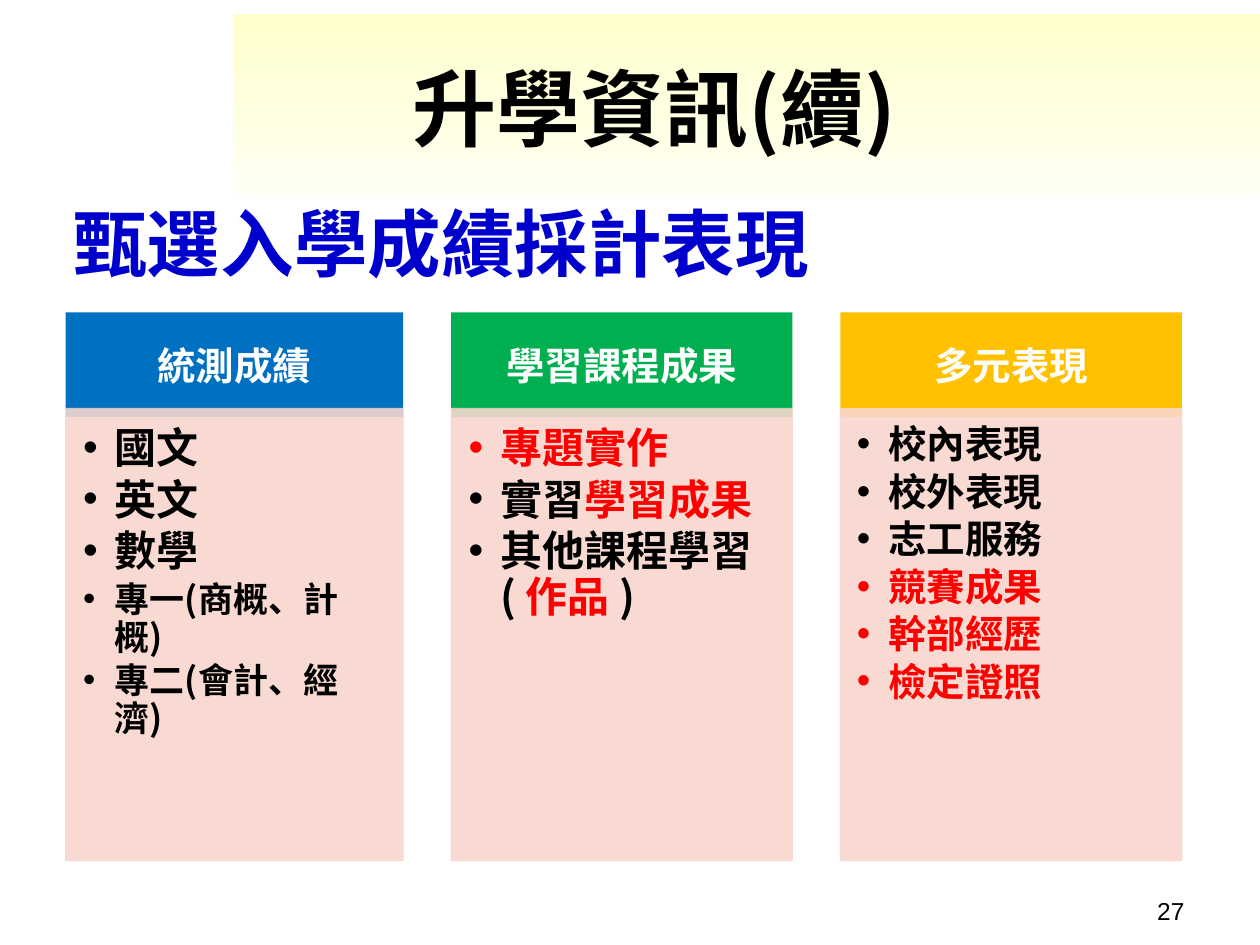
from lxml import etree
from pptx import Presentation
from pptx.dml.color import RGBColor
from pptx.enum import shapes, text
from pptx.oxml import ns
from pptx import util as u

COLORS = {
    "black": "000000", "white": "FFFFFF", "red": "FF0000", "navy": "0000CC",
    "blue": "0070C0", "green": "00B050", "amber": "FFC000", "panel": "F8D7CE",
    "band_top": "FFFFCC", "band_bottom": "FFFFF3",
}
CJK_FONT = "Noto Sans CJK SC"
HEADER_TOP, HEADER_HEIGHT = 2.48, 0.83
LIST_TOP, LIST_HEIGHT = 3.24, 3.59
LINE_RATIO, AFTER_RATIO = 1.09, 0.14  # line pitch and gap, relative to text size

# Each list item is (size, [(text, colour), ...])
COLUMNS = [
    dict(left=0.52, width=2.68, header="統測成績", color="blue", body=2,
         margins=(0.14, 0.14, 0.19, 0.21),
         items=[(24, [("國文", "black")]), (24, [("英文", "black")]),
                (24, [("數學", "black")]),
                (20, [("專一(商概、計概)", "black")]),
                (20, [("專二(會計、經濟)", "black")])]),
    dict(left=3.58, width=2.71, header="學習課程成果", color="green", body=3,
         margins=(0.14, 0.14, 0.19, 0.21),
         items=[(24, [("專題實作", "red")]),
                (24, [("實習", "black"), ("學習成果", "red")]),
                (24, [("其他課程學習 ( ", "black"), ("作品 ", "red"), (")", "black")])]),
    dict(left=6.67, width=2.71, header="多元表現", color="amber", body=4,
         margins=(0.13, 0.13, 0.17, 0.19),
         items=[(22, [(name, "black")]) for name in ("校內表現", "校外表現", "志工服務")]
         + [(22, [(name, "red")]) for name in ("競賽成果", "幹部經歷", "檢定證照")]),
]


def rgb(name):
    return RGBColor.from_string(COLORS[name])


def place(shape, left, top, width, height):
    shape.left, shape.top = u.Inches(left), u.Inches(top)
    shape.width, shape.height = u.Inches(width), u.Inches(height)


def set_frame(shape, anchor=text.MSO_ANCHOR.MIDDLE, margins=(0.1, 0.05, 0.1, 0.05)):
    frame = shape.text_frame
    frame.word_wrap = True
    frame.auto_size = text.MSO_AUTO_SIZE.NONE
    frame.vertical_anchor = anchor
    (frame.margin_left, frame.margin_top,
     frame.margin_right, frame.margin_bottom) = map(u.Inches, margins)
    return frame


def add_run(paragraph, words, size=22, color="black", font=CJK_FONT, bold=True):
    run = paragraph.add_run()
    run.text = words
    run.font.size, run.font.bold, run.font.name = u.Pt(size), bold, font
    run.font.color.rgb = rgb(color)
    east_asian = etree.SubElement(run._r.get_or_add_rPr(), ns.qn("a:ea"))
    east_asian.set("typeface", font)


def write_line(frame, words, align=text.PP_ALIGN.CENTER, **font_format):
    paragraph = frame.paragraphs[0]
    paragraph.alignment = align
    paragraph.space_before = u.Pt(0)
    add_run(paragraph, words, **font_format)


def add_back_rectangle(slide, *position):
    """Add a plain rectangle behind the placeholders."""
    shape = slide.shapes.add_shape(shapes.MSO_SHAPE.RECTANGLE, *map(u.Inches, position))
    shape.shadow.inherit = False
    shape.line.fill.background()
    shape._element.getparent().insert(2, shape._element)
    return shape


def add_bullet(paragraph):
    properties = paragraph._p.get_or_add_pPr()
    properties.set("marL", str(u.Inches(0.25)))
    properties.set("indent", str(-u.Inches(0.25)))
    etree.SubElement(properties, ns.qn("a:buFont")).set("typeface", "Arial")
    etree.SubElement(properties, ns.qn("a:buChar")).set("char", "•")


def set_panel_colors(shape):
    shape.fill.solid()
    shape.fill.fore_color.rgb = rgb("panel")
    shape.line.color.rgb = rgb("panel")
    shape.line.width = u.Pt(0.5)
    for color in shape._element.spPr.iter(ns.qn("a:srgbClr")):
        etree.SubElement(color, ns.qn("a:alpha")).set("val", "90000")


def fill_list(shape, items, margins):
    frame = set_frame(shape, text.MSO_ANCHOR.TOP, margins)
    for index, (size, runs) in enumerate(items):
        paragraph = frame.add_paragraph() if index else frame.paragraphs[0]
        add_bullet(paragraph)
        paragraph.level = 1
        paragraph.alignment = text.PP_ALIGN.LEFT
        paragraph.line_spacing = u.Pt(round(LINE_RATIO * size, 1))
        paragraph.space_before = u.Pt(0)
        paragraph.space_after = u.Pt(round(AFTER_RATIO * size, 1))
        for words, color in runs:
            add_run(paragraph, words, size=size, color=color)


def add_column(slide, left, width, header, color, body, margins, items):
    heading = add_back_rectangle(slide, left, HEADER_TOP, width, HEADER_HEIGHT)
    heading.fill.solid()
    heading.fill.fore_color.rgb = rgb(color)
    write_line(set_frame(heading, margins=(0.17, 0.1, 0.17, 0.1)), header, color="white")

    panel = slide.placeholders[body]
    place(panel, left, LIST_TOP, width, LIST_HEIGHT)
    set_panel_colors(panel)
    fill_list(panel, items, margins)


def main():
    presentation = Presentation()
    presentation.slide_width, presentation.slide_height = u.Inches(10), u.Inches(7.5)
    slide = presentation.slides.add_slide(presentation.slide_layouts[4])

    # Title on its gradient band
    band = add_back_rectangle(slide, 1.85, 0.11, 8.15, 1.43)
    band.fill.gradient()
    band.fill.gradient_angle = 270
    for stop, color, position in zip(band.fill.gradient_stops,
                                     ("band_top", "band_bottom"), (0, 1)):
        stop.color.rgb = rgb(color)
        stop.position = position
    title = slide.shapes.title
    place(title, 1.85, 0.38, 6.69, 0.93)
    write_line(set_frame(title), "升學資訊(續)", size=48)

    # Subtitle
    subtitle = slide.placeholders[1]
    place(subtitle, 0.43, 1.52, 6.14, 0.81)
    write_line(set_frame(subtitle), "甄選入學成績採計表現", size=42, color="navy")

    # Three columns
    for column in COLUMNS:
        add_column(slide, **column)

    # Page number
    number = slide.shapes.add_textbox(*map(u.Inches, (7.17, 7.06, 2.33, 0.39)))
    write_line(set_frame(number, text.MSO_ANCHOR.TOP), "27", text.PP_ALIGN.RIGHT,
               size=14, font="Arial", bold=False)

    presentation.save("out.pptx")


if __name__ == "__main__":
    main()
